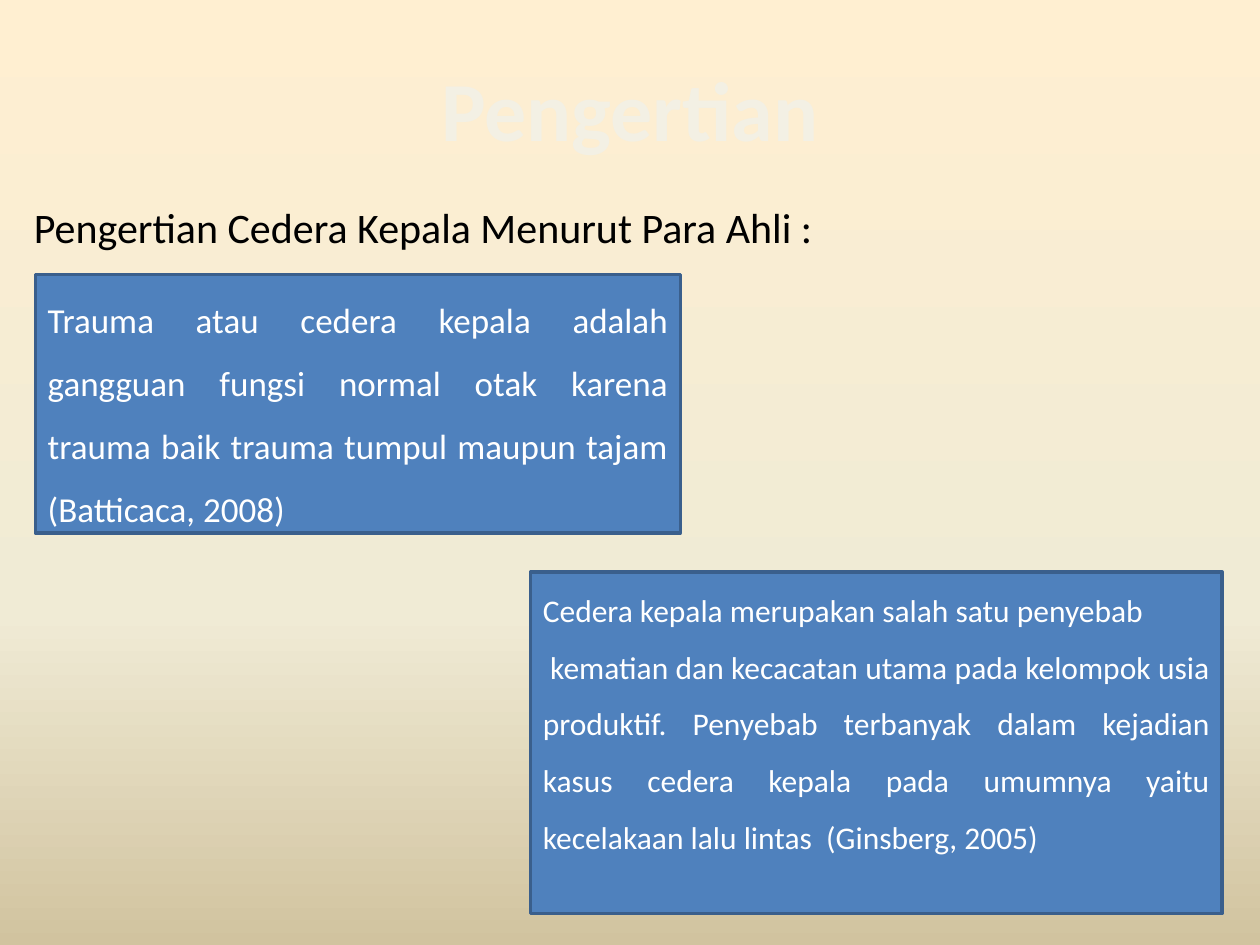
from copy import deepcopy

from pptx import Presentation
from pptx.dml.color import RGBColor
from pptx.enum.shapes import MSO_SHAPE
from pptx.enum.text import MSO_ANCHOR, PP_ALIGN
from pptx.oxml.ns import qn
from pptx.util import Inches, Pt

RECT = MSO_SHAPE.RECTANGLE
TOP, MIDDLE = MSO_ANCHOR.TOP, MSO_ANCHOR.MIDDLE
CENTER, JUSTIFY = PP_ALIGN.CENTER, PP_ALIGN.JUSTIFY

FONT = "Calibri"
BACKGROUND = [(0, "FFEFD1"), (0.65, "F0EBD5"), (1, "D1C39F")]
TITLE = "Pengertian"
INTRO = "Pengertian Cedera Kepala Menurut Para Ahli :"
# box, font size, anchor, top margin, paragraphs
DEFINITIONS = [
    ((0.28, 2.18, 5.12, 2.05), 20, MIDDLE, 0.05, [
        "Trauma atau cedera kepala adalah gangguan fungsi normal otak karena "
        "trauma baik trauma tumpul maupun tajam (Batticaca, 2008)"]),
    ((4.21, 4.54, 5.49, 2.71), 18, TOP, 0, [
        "Cedera kepala merupakan salah satu penyebab",
        " kematian dan kecacatan utama pada kelompok usia produktif. "
        "Penyebab terbanyak dalam kejadian kasus cedera kepala pada umumnya "
        "yaitu kecelakaan lalu lintas  (Ginsberg, 2005)"]),
]


def rgb(color):
    return RGBColor.from_string(color)


def set_background(s, stops):
    """Fill the slide with a gradient running from top to bottom."""
    fill = s.background.fill
    fill.gradient()
    fill.gradient_angle = 270
    stop_list = s.element.find(".//" + qn("a:gsLst"))
    while len(stop_list) < len(stops):
        stop_list.append(deepcopy(stop_list[0]))
    for stop, (position, color) in zip(fill.gradient_stops, stops):
        stop.position = position
        stop.color.rgb = rgb(color)


def write(shape, paragraphs, size, color, align, anchor, spacing=1.0, bold=False):
    tf = shape.text_frame
    tf.word_wrap = True
    tf.vertical_anchor = anchor
    tf.text = "\n".join(paragraphs)
    for p in tf.paragraphs:
        p.alignment = align
        p.line_spacing = spacing
        for r in p.runs:
            r.font.name = FONT
            r.font.size = Pt(size)
            r.font.bold = bold
            r.font.color.rgb = rgb(color)


def add_text(s, box, text, *style, **options):
    write(s.shapes.add_textbox(*map(Inches, box)), [text], *style, **options)


def add_definition(s, box, size, anchor, margin_top, paragraphs):
    sp = s.shapes.add_shape(RECT, *map(Inches, box))
    sp.shadow.inherit = False
    sp.fill.solid()
    sp.fill.fore_color.rgb = rgb("4F81BD")
    sp.line.color.rgb = rgb("3A5F8C")
    sp.line.width = Pt(2)
    sp.text_frame.margin_top = Inches(margin_top)
    write(sp, paragraphs, size, "FFFFFF", JUSTIFY, anchor, spacing=1.5)


def main():
    prs = Presentation()
    prs.slide_width, prs.slide_height = Inches(10), Inches(7.5)
    s = prs.slides.add_slide(prs.slide_layouts[6])
    set_background(s, BACKGROUND)
    add_text(s, (0.5, 0.23, 9, 1.25), TITLE, 48, "F3F0E4", CENTER, MIDDLE, bold=True)
    add_text(s, (0.17, 1.55, 9.53, 5.75), INTRO, 24, "000000", JUSTIFY, TOP)
    for definition in DEFINITIONS:
        add_definition(s, *definition)
    prs.save("out.pptx")


if __name__ == "__main__":
    main()
